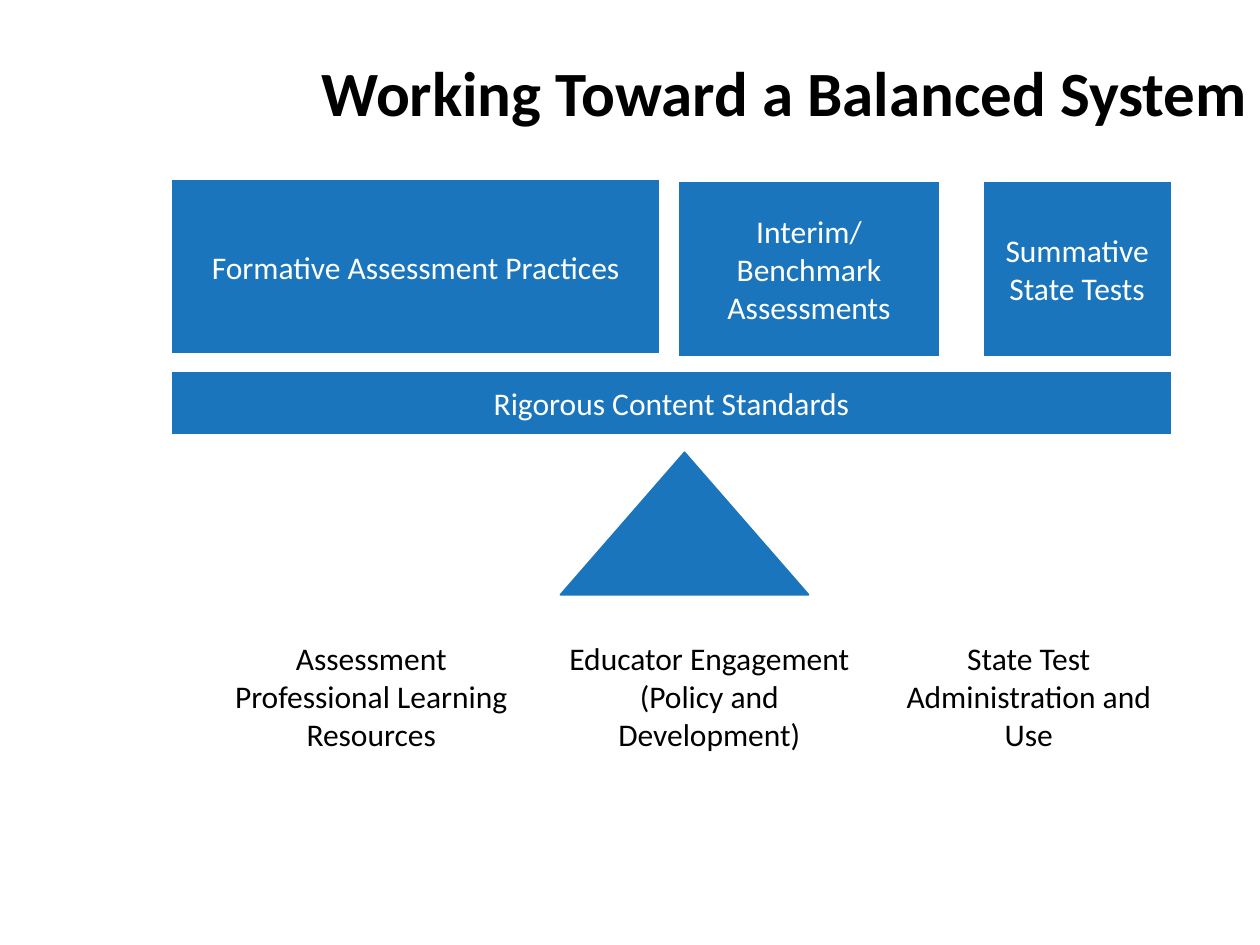
from typing import NamedTuple

from pptx import Presentation
from pptx.dml.color import RGBColor
from pptx.enum.shapes import MSO_SHAPE
from pptx.enum.text import MSO_ANCHOR, PP_ALIGN
from pptx.util import Cm, Pt

RECTANGLE = MSO_SHAPE.RECTANGLE
TRIANGLE = MSO_SHAPE.ISOSCELES_TRIANGLE
MIDDLE = MSO_ANCHOR.MIDDLE
CENTER, RIGHT = PP_ALIGN.CENTER, PP_ALIGN.RIGHT

BLUE = RGBColor(0x1B, 0x75, 0xBC)
WHITE = RGBColor(0xFF, 0xFF, 0xFF)
BLACK = RGBColor(0x00, 0x00, 0x00)
FONT = "Calibri"


class Frame(NamedTuple):
    """Position and size in centimetres."""
    left: float
    top: float
    width: float
    height: float

    def lengths(self) -> list[Cm]:
        return [Cm(value) for value in self]


class Style(NamedTuple):
    fill: RGBColor
    line: RGBColor
    line_width: float
    text: RGBColor


class Block(NamedTuple):
    text: str
    frame: Frame
    style: Style


WEIGHT = Style(BLUE, WHITE, 1, WHITE)
SUPPORT = Style(WHITE, WHITE, 5, BLACK)
FULCRUM = Style(BLUE, BLUE, 1, WHITE)

WEIGHT_HEIGHT = 3.53
SUPPORT_TOP, SUPPORT_HEIGHT = 12.34, 3.38

TITLE_FRAME = Frame(2.54, 0.84, 22.86, 2.21)
FULCRUM_FRAME = Frame(11.3, 9.12, 5, 2.87)

BLOCKS = [
    Block("State Test Administration and Use",
          Frame(17.78, SUPPORT_TOP, 5.92, SUPPORT_HEIGHT), SUPPORT),
    Block("Rigorous Content Standards", Frame(3.45, 7.49, 20.17, 1.27), WEIGHT),
    Block("Summative State Tests",
          Frame(19.81, 3.66, 3.81, WEIGHT_HEIGHT), WEIGHT),
    Block("Assessment Professional Learning Resources",
          Frame(4.17, SUPPORT_TOP, 6.63, SUPPORT_HEIGHT), SUPPORT),
    Block("Educator Engagement (Policy and Development)",
          Frame(11.15, SUPPORT_TOP, 6.3, SUPPORT_HEIGHT), SUPPORT),
    Block("Interim/ Benchmark Assessments",
          Frame(13.67, 3.66, 5.28, WEIGHT_HEIGHT), WEIGHT),
    Block("Formative Assessment Practices",
          Frame(3.45, 3.61, 9.86, WEIGHT_HEIGHT), WEIGHT),
]


def write(shape, text: str, size: float, color: RGBColor,
          align: PP_ALIGN, bold: bool = False):
    """Set the one paragraph of a shape and return it."""
    frame = shape.text_frame
    frame.word_wrap = True
    frame.vertical_anchor = MIDDLE
    paragraph = frame.paragraphs[0]
    paragraph.text = text
    paragraph.alignment = align
    font = paragraph.font
    font.name, font.size, font.bold = FONT, Pt(size), bold
    font.color.rgb = color
    return paragraph


def add_figure(slide, kind: MSO_SHAPE, frame: Frame, style: Style):
    figure = slide.shapes.add_shape(kind, *frame.lengths())
    figure.shadow.inherit = False
    figure.fill.solid()
    figure.fill.fore_color.rgb = style.fill
    figure.line.color.rgb = style.line
    figure.line.width = Pt(style.line_width)
    return figure


def add_block(slide, block: Block) -> None:
    figure = add_figure(slide, RECTANGLE, block.frame, block.style)
    write(figure, block.text, 18, block.style.text, CENTER)


def main() -> None:
    presentation = Presentation()
    presentation.slide_width, presentation.slide_height = Cm(25.4), Cm(19.05)
    slide = presentation.slides.add_slide(presentation.slide_layouts[6])

    title = slide.shapes.add_textbox(*TITLE_FRAME.lengths())
    heading = write(title, "Working Toward a Balanced System", 36, BLACK,
                    RIGHT, bold=True)
    heading.line_spacing = 0.9

    for block in BLOCKS:
        add_block(slide, block)
    add_figure(slide, TRIANGLE, FULCRUM_FRAME, FULCRUM)

    presentation.save("out.pptx")


if __name__ == "__main__":
    main()
